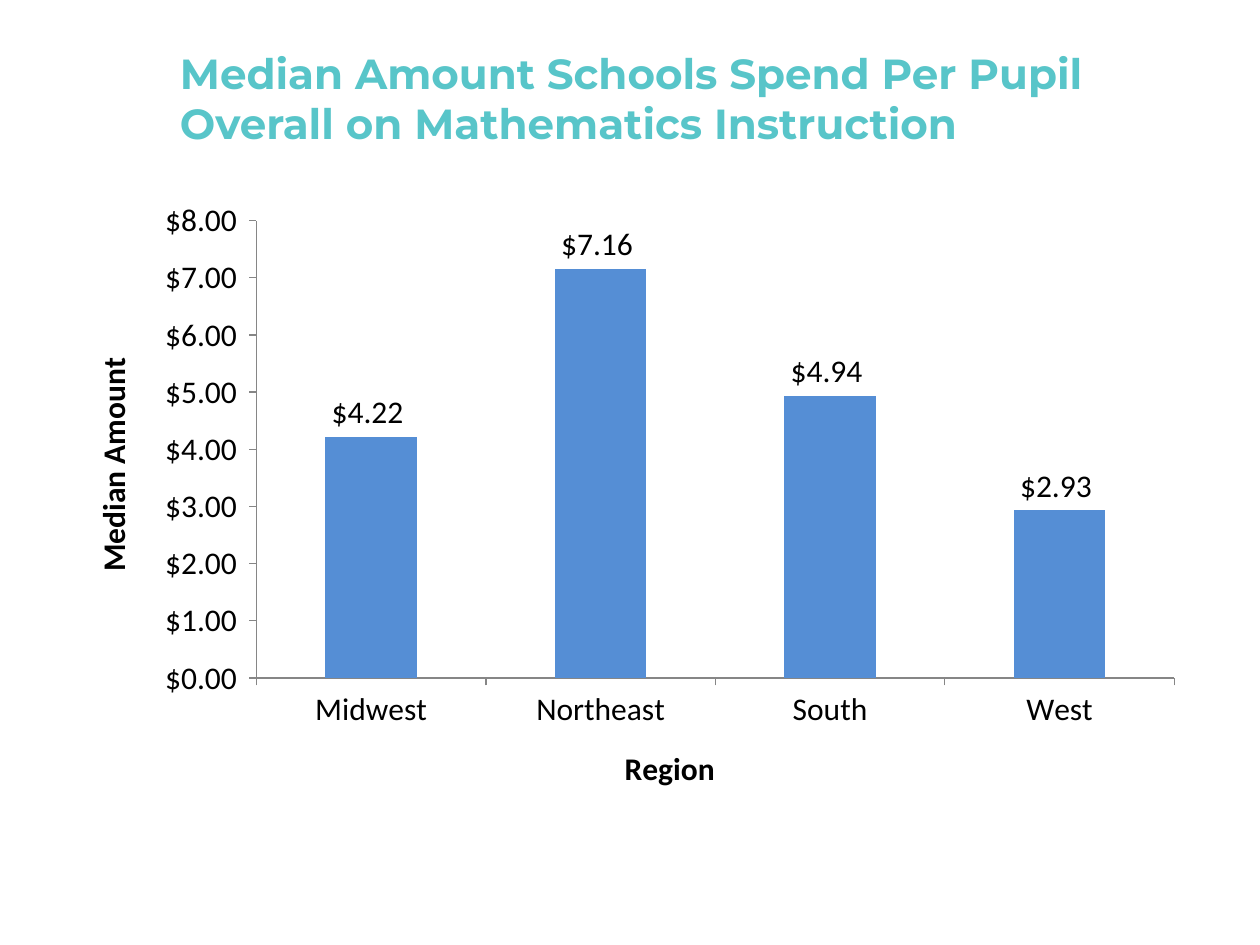
from pptx import Presentation
from pptx.chart.data import CategoryChartData
from pptx.dml.color import RGBColor
from pptx.enum.chart import XL_CHART_TYPE, XL_LABEL_POSITION, XL_TICK_MARK
from pptx.enum.text import MSO_ANCHOR
from pptx.util import Inches, Pt

TITLE = "Median Amount Schools Spend Per Pupil Overall on Mathematics Instruction"
SPENDING = {"Midwest": 4.22, "Northeast": 7.16, "South": 4.94, "West": 2.93}
AXIS_TITLES = ("Region", "Median Amount")
MONEY = '"$"#,##0.00_);[Red]\\("$"#,##0.00\\)'
WIDTH, HEIGHT = Inches(10), Inches(7.5)
MARGIN = 0.05


def style(font, name, size, color, bold=False):
    """Set the face, size, colour and weight of a font."""
    font.name, font.size, font.bold = name, Pt(size), bold
    font.color.rgb = RGBColor.from_string(color)


def add_title(page):
    """Add the heading above the chart."""
    left = Inches(1.33)
    box = page.shapes.add_textbox(left, Inches(0.3), int(WIDTH * (1 - MARGIN)) - left, Inches(0.95))
    frame = box.text_frame
    frame.word_wrap = True
    frame.vertical_anchor = MSO_ANCHOR.MIDDLE
    frame.text = TITLE
    style(frame.paragraphs[0].runs[0].font, "Montserrat", 24, "58C5C9", True)


def add_spending_chart(page):
    """Add the column chart of spending by region."""
    data = CategoryChartData(number_format=MONEY)
    data.categories = list(SPENDING)
    data.add_series("Series 1", list(SPENDING.values()))
    chart = page.shapes.add_chart(
        XL_CHART_TYPE.COLUMN_CLUSTERED, int(WIDTH * MARGIN), int(HEIGHT * 0.2),
        int(WIDTH * (1 - 2 * MARGIN)), int(HEIGHT * 2 / 3), data).chart
    chart.has_legend = chart.has_title = False
    style(chart.font, "Calibri", 18, "000000")

    for axis, title in zip((chart.category_axis, chart.value_axis), AXIS_TITLES):
        axis.has_major_gridlines = False
        axis.major_tick_mark = XL_TICK_MARK.OUTSIDE
        axis.format.line.color.rgb = RGBColor.from_string("868686")
        axis.format.line.width = Pt(0.75)
        frame = axis.axis_title.text_frame
        frame.text = title
        style(frame.paragraphs[0].runs[0].font, "Calibri", 18, "000000", True)

    amounts = chart.value_axis
    amounts.minimum_scale, amounts.maximum_scale, amounts.major_unit = 0, 8, 1
    amounts.tick_labels.number_format = MONEY
    amounts.tick_labels.number_format_is_linked = False

    plot = chart.plots[0]
    plot.gap_width = 151
    plot.vary_by_categories = False
    fill = plot.series[0].format.fill
    fill.solid()
    fill.fore_color.rgb = RGBColor.from_string("558ED5")
    labels = plot.series[0].data_labels
    labels.show_value = True
    labels.number_format = MONEY
    labels.number_format_is_linked = False
    labels.position = XL_LABEL_POSITION.OUTSIDE_END
    style(labels.font, "Calibri", 18, "000000")


def main():
    """Build and save the deck."""
    deck = Presentation()
    deck.slide_width, deck.slide_height = WIDTH, HEIGHT
    page = deck.slides.add_slide(deck.slide_layouts[6])
    add_spending_chart(page)
    add_title(page)
    deck.save("out.pptx")


if __name__ == "__main__":
    main()
